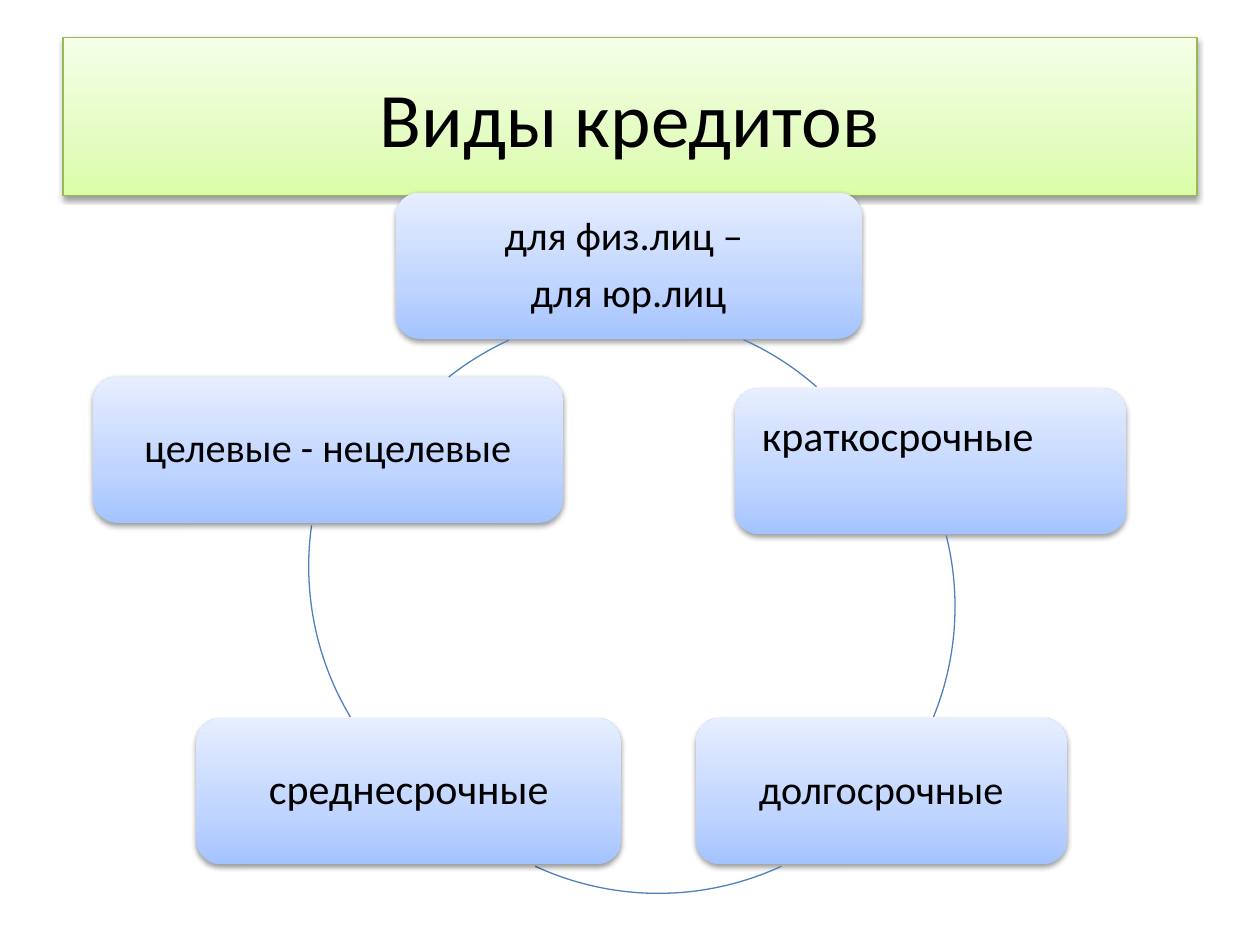
import math
from dataclasses import dataclass

import pptx
import pptx.dml.color
import pptx.enum.shapes
import pptx.enum.text
import pptx.oxml
import pptx.oxml.ns
import pptx.util
from pptx.util import Inches

COLORS = {"text": "000000", "title_line": "98B955", "ring": "4F81BD"}
GREEN_STOPS = {0: "DAFDA7", 35: "E4FCC2", 100: "F5FFE7"}
BLUE_STOPS = {0: "A4C4FF", 35: "BFD4FF", 100: "E6EEFF"}
FONT = "Calibri"
BOX_HEIGHT = 1.16
BOX_INSET = 0.16
RING_SIZE = 4.65
SHAPES = pptx.enum.shapes.MSO_SHAPE
ALIGN = pptx.enum.text.PP_ALIGN
ANCHOR = pptx.enum.text.MSO_ANCHOR


@dataclass
class CreditBox:
    left: float
    top: float
    width: float
    lines: tuple[str, ...]
    size: int = 23
    align: ALIGN = ALIGN.CENTER
    anchor: ANCHOR = ANCHOR.MIDDLE


@dataclass
class RingArc:
    """A clockwise piece of a circle between two points on the slide."""
    left: float
    top: float
    start: tuple[float, float]
    end: tuple[float, float]


BOXES = [
    CreditBox(3.14, 1.53, 3.7, ("для физ.лиц – ", "для юр.лиц")),
    CreditBox(5.83, 3.08, 3.11, ("краткосрочные",), 24, ALIGN.LEFT, ANCHOR.TOP),
    CreditBox(5.52, 5.7, 2.95, ("долгосрочные",)),
    CreditBox(1.56, 5.7, 3.37, ("среднесрочные",), 24),
    CreditBox(0.74, 2.99, 3.73, ("целевые - нецелевые",)),
]
ARCS = [
    RingArc(2.62, 2.49, (5.9, 2.7), (6.48, 3.07)),
    RingArc(2.93, 2.49, (7.51, 4.25), (7.41, 5.69)),
    RingArc(2.9, 2.44, (6.2, 6.87), (4.25, 6.87)),
    RingArc(2.45, 2.17, (2.78, 5.69), (2.47, 4.17)),
    RingArc(2.68, 2.49, (3.56, 2.99), (4.04, 2.7)),
]


def rgb(value: str) -> pptx.dml.color.RGBColor:
    return pptx.dml.color.RGBColor.from_string(value)


def add_color(parent, value: str):
    color = pptx.oxml.ns.qn("a:srgbClr")
    return parent.makeelement(color, {"val": value})


def add_panel(slide, kind: SHAPES, left: float, top: float, width: float,
              height: float, stops: dict[int, str]):
    """Add a shape with a gradient rising from its bottom edge and a soft shadow."""
    qn = pptx.oxml.ns.qn
    panel = slide.shapes.add_shape(
        kind, Inches(left), Inches(top), Inches(width), Inches(height))
    panel.line.fill.background()
    panel.fill.gradient()
    panel.fill.gradient_angle = 90
    stop_list = panel.element.spPr.find(".//" + qn("a:gsLst"))
    for old_stop in list(stop_list):
        stop_list.remove(old_stop)
    for position, value in stops.items():
        stop = stop_list.makeelement(qn("a:gs"), {"pos": str(position * 1000)})
        stop.append(add_color(stop, value))
        stop_list.append(stop)

    panel.shadow.inherit = False
    effects = panel.element.spPr.find(qn("a:effectLst"))
    shadow = effects.makeelement(qn("a:outerShdw"), {
        "blurRad": "40000", "dist": "20000", "dir": "5400000", "rotWithShape": "0"})
    shadow_color = add_color(shadow, COLORS["text"])
    shadow_color.append(shadow.makeelement(qn("a:alpha"), {"val": "38000"}))
    shadow.append(shadow_color)
    effects.append(shadow)
    return panel


def write_lines(panel, lines: tuple[str, ...], size: int,
                align: ALIGN = ALIGN.CENTER, anchor: ANCHOR = ANCHOR.MIDDLE) -> None:
    frame = panel.text_frame
    frame.word_wrap = True
    frame.vertical_anchor = anchor
    for index, line in enumerate(lines):
        paragraph = frame.add_paragraph() if index else frame.paragraphs[0]
        paragraph.text = line
        paragraph.alignment = align
        paragraph.font.name = FONT
        paragraph.font.size = pptx.util.Pt(size)
        paragraph.font.color.rgb = rgb(COLORS["text"])


def add_title(slide) -> None:
    title = add_panel(slide, SHAPES.RECTANGLE, 0.5, 0.3, 9, 1.25, GREEN_STOPS)
    title.line.color.rgb = rgb(COLORS["title_line"])
    title.line.width = pptx.util.Pt(0.75)
    write_lines(title, ("Виды кредитов",), 44)


def add_credit_box(slide, box: CreditBox) -> None:
    panel = add_panel(slide, SHAPES.ROUNDED_RECTANGLE, box.left, box.top,
                      box.width, BOX_HEIGHT, BLUE_STOPS)
    write_lines(panel, box.lines, box.size, box.align, box.anchor)
    frame = panel.text_frame
    frame.margin_left = frame.margin_right = Inches(BOX_INSET)
    frame.margin_top = frame.margin_bottom = Inches(BOX_INSET)
    for paragraph in frame.paragraphs:
        paragraph.line_spacing = 0.9
        paragraph.space_after = pptx.util.Pt(8)


def add_ring_arc(slide, arc: RingArc) -> None:
    curve = slide.shapes.add_shape(
        SHAPES.ARC, Inches(arc.left), Inches(arc.top),
        Inches(RING_SIZE), Inches(RING_SIZE))
    center_x, center_y = arc.left + RING_SIZE / 2, arc.top + RING_SIZE / 2
    for index, (x, y) in enumerate((arc.start, arc.end)):
        degrees = math.degrees(math.atan2(y - center_y, x - center_x)) % 360
        # Arc angles are stored in 60000ths of a degree, adjustments in 100000ths.
        curve.adjustments[index] = degrees * 0.6
    curve.fill.background()
    curve.line.color.rgb = rgb(COLORS["ring"])
    curve.line.width = pptx.util.Pt(0.75)
    curve.shadow.inherit = False


def main() -> None:
    deck = pptx.Presentation()
    deck.slide_width, deck.slide_height = Inches(10), Inches(7.5)
    slide = deck.slides.add_slide(deck.slide_layouts[6])
    add_title(slide)
    for box, arc in zip(BOXES, ARCS):
        add_credit_box(slide, box)
        add_ring_arc(slide, arc)
    deck.save("out.pptx")


if __name__ == "__main__":
    main()
